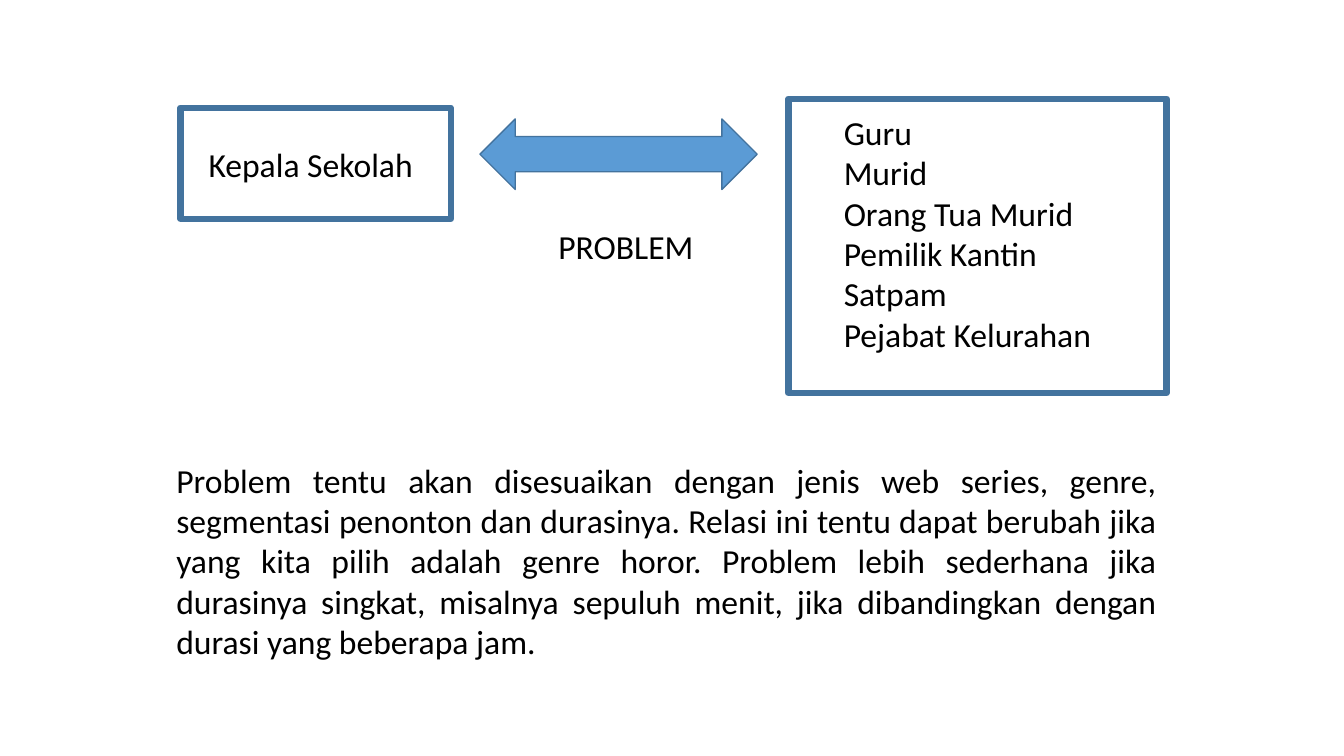
from pptx import Presentation
from pptx.dml.color import RGBColor
from pptx.enum import shapes, text
from pptx.util import Inches, Pt

# Content: lines, (left, top, width, height) in inches, alignment
LEFT, JUSTIFY = text.PP_ALIGN.LEFT, text.PP_ALIGN.JUSTIFY
TEXTS = [
    (["Kepala Sekolah"], (1.97, 1.38, 2.27, 0.5), LEFT),
    (["Guru", "Murid", "Orang Tua Murid", "Pemilik Kantin", "Satpam",
      "Pejabat Kelurahan"], (8.27, 1.06, 3.01, 2.52), LEFT),
    (["PROBLEM"], (5.44, 2.19, 1.8, 0.5), LEFT),
    (["Problem tentu akan disesuaikan dengan jenis web series, genre, "
      "segmentasi penonton dan durasinya. Relasi ini tentu dapat berubah jika "
      "yang kita pilih adalah genre horor. Problem lebih sederhana jika "
      "durasinya singkat, misalnya sepuluh menit, jika dibandingkan dengan "
      "durasi yang beberapa jam."], (1.65, 4.51, 9.92, 2.12), JUSTIFY),
]
# Preset, box, fill, line width in points
RECT = shapes.MSO_SHAPE.RECTANGLE
ARROW = shapes.MSO_SHAPE.LEFT_RIGHT_ARROW
SHAPES = [
    (RECT, (1.79, 1.07, 2.68, 1.1), None, 4.5),
    (ARROW, (4.76, 1.18, 2.75, 0.7), "5B9BD5", 1),
    (RECT, (7.82, 0.98, 3.75, 2.92), None, 4.5),
]
OUTLINE, INK = "43739E", "000000"


def color(hex_code):
    return RGBColor.from_string(hex_code)


def add_outlined(s, preset, box, fill, width):
    sp = s.shapes.add_shape(preset, *map(Inches, box))
    sp.shadow.inherit = False
    if fill:
        sp.fill.solid()
        sp.fill.fore_color.rgb = color(fill)
    else:
        sp.fill.background()
    sp.line.color.rgb = color(OUTLINE)
    sp.line.width = Pt(width)


def add_text(s, lines, box, align):
    tf = s.shapes.add_textbox(*map(Inches, box)).text_frame
    tf.word_wrap = True
    tf.auto_size = text.MSO_AUTO_SIZE.SHAPE_TO_FIT_TEXT
    for i, line in enumerate(lines):
        p = tf.add_paragraph() if i else tf.paragraphs[0]
        p.alignment = align
        r = p.add_run()
        r.text = line
        r.font.name = "Calibri"
        r.font.size = Pt(24)
        r.font.color.rgb = color(INK)


# Slide
prs = Presentation()
prs.slide_width, prs.slide_height = Inches(13.33), Inches(7.5)
s = prs.slides.add_slide(prs.slide_layouts[6])

# Boxes and arrow, then the words over them
for item in SHAPES:
    add_outlined(s, *item)
for item in TEXTS:
    add_text(s, *item)

prs.save("out.pptx")
